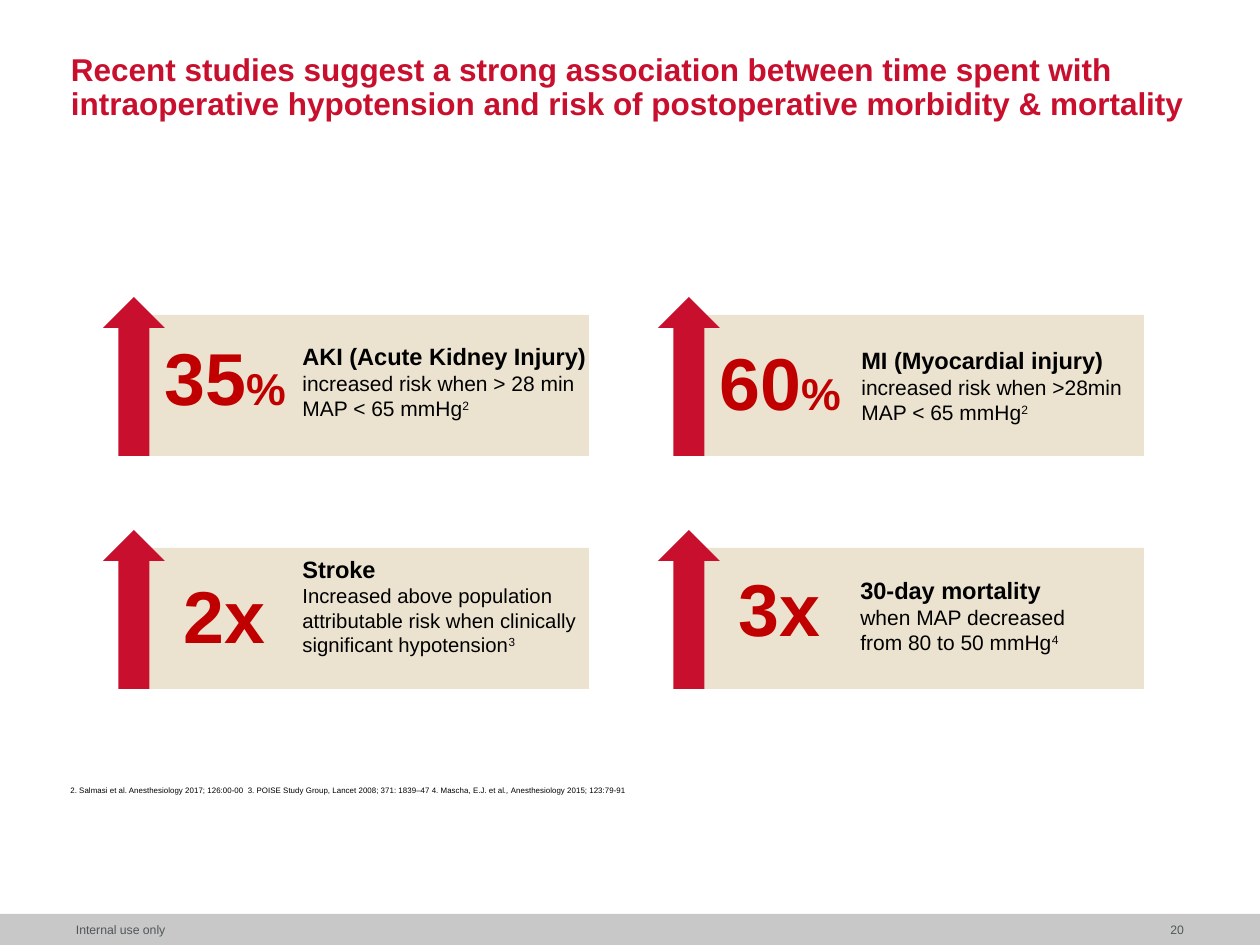
from pptx import Presentation
from pptx.dml.color import RGBColor
from pptx.enum.shapes import MSO_SHAPE
from pptx.enum.text import MSO_ANCHOR, PP_ALIGN
from pptx.util import Pt

PX_PER_INCH = 126
COLORS = {"red": "C8102E", "figure": "C00000", "sand": "EBE3CF",
          "bar": "C8C8C8", "grey": "505759", "black": "000000"}
STYLES = {
    "title": {"size": 18, "bold": True, "color": "red"},
    "figure": {"size": 42, "bold": True, "color": "figure"},
    "percent": {"size": 25.5, "bold": True, "color": "figure"},
    "outcome": {"size": 13.5, "bold": True, "color": "black"},
    "detail": {"size": 12, "bold": False, "color": "black"},
    "dense": {"size": 11.6, "bold": False, "color": "black"},
    "source": {"size": 4.5, "bold": False, "color": "black"},
    "source italic": {"size": 4.5, "italic": True, "color": "black"},
    "footer": {"size": 7, "bold": False, "color": "grey"},
}
FLUSH = {"margin_left": 0, "margin_right": 0, "margin_top": 0,
         "margin_bottom": 0, "vertical_anchor": MSO_ANCHOR.MIDDLE}
PANEL_SIZE = (470, 141)
PANEL_COLUMNS = (119, 674)
PANEL_ROWS = (315, 548)
FIGURE_CENTER = 106

FINDINGS = [
    {"figure": [("35", "figure"), ("%", "percent")], "figure_width": 147, "figure_top": 11,
     "text_box": (171, 21, 310, 96),
     "text": [[("AKI (Acute Kidney Injury) ", "outcome"),
               ("increased risk when > 28 min MAP < 65 mmHg", "detail"),
               ("2", "detail", 30)]]},
    {"figure": [("60", "figure"), ("%", "percent")], "figure_width": 147, "figure_top": 16,
     "text_box": (175, 25, 296, 92),
     "text": [[("MI (Myocardial injury) ", "outcome"),
               ("increased risk when >28min MAP < 65 mmHg", "detail"),
               ("2", "detail", 30)]]},
    {"figure": [("2x", "figure")], "figure_width": 108, "figure_top": 16,
     "text_box": (171, 1, 299, 140),
     "text": [[("Stroke", "outcome")],
              [("Increased above population attributable risk when clinically "
                "significant hypotension", "dense"), ("3", "dense", 30)]]},
    {"figure": [("3x", "figure")], "figure_width": 108, "figure_top": 9,
     "text_box": (174, 22, 277, 92),
     "text": [[("30-day mortality", "outcome")],
              [("when MAP decreased from 80 to 50 mmHg", "detail"),
               ("4", "detail", 30)]]},
]


def emu(*lengths):
    """Turn px lengths into EMU."""
    return [round(length * 914400 / PX_PER_INCH) for length in lengths]


def add_block(slide, preset, box, color):
    """Add a flat preset shape without outline."""
    block = slide.shapes.add_shape(preset, *emu(*box))
    block.shadow.inherit = False
    block.fill.solid()
    block.fill.fore_color.rgb = RGBColor.from_string(COLORS[color])
    block.line.fill.background()


def add_words(slide, box, paragraphs, frame_format=None, paragraph_format=None):
    """Add a text box holding paragraphs of styled runs."""
    frame = slide.shapes.add_textbox(*emu(*box)).text_frame
    for name, value in {"word_wrap": True, **(frame_format or {})}.items():
        setattr(frame, name, value)
    for index, pieces in enumerate(paragraphs):
        paragraph = frame.add_paragraph() if index else frame.paragraphs[0]
        for name, value in (paragraph_format or {}).items():
            setattr(paragraph, name, value)
        for words, style, *raised in pieces:
            run = paragraph.add_run()
            run.text = words
            look = dict(STYLES[style], name="Arial")
            run.font.color.rgb = RGBColor.from_string(COLORS[look.pop("color")])
            look["size"] = Pt(look["size"])
            for name, value in look.items():
                setattr(run.font, name, value)
            for percent in raised:
                run.font._element.set("baseline", str(percent * 1000))


def add_title(slide, box):
    """Add the headline."""
    headline = ("Recent studies suggest a strong association between time spent with "
                "intraoperative hypotension and risk of postoperative morbidity & mortality")
    add_words(slide, box, [[(headline, "title")]], FLUSH, {"line_spacing": 0.9})


def add_finding(slide, box, finding):
    """Add a panel with its rising arrow, figure and explanation."""
    left, top, _, height = box
    add_block(slide, MSO_SHAPE.RECTANGLE, box, "sand")
    add_block(slide, MSO_SHAPE.UP_ARROW, (left - 16, top - 18, 62, height + 18), "red")
    figure_width = finding["figure_width"]
    figure_left = left + FIGURE_CENTER - figure_width // 2
    add_words(slide, (figure_left, top + finding["figure_top"], figure_width, 102),
              [finding["figure"]], {"word_wrap": False})
    text_left, text_top, *text_size = finding["text_box"]
    add_words(slide, (left + text_left, top + text_top, *text_size), finding["text"])


def add_sources(slide, box):
    """Add the line of references."""
    add_words(slide, box, [[
        ("2. Salmasi et al. Anesthesiology 2017; 126:00-00  3. POISE Study Group, "
         "Lancet 2008; 371: 1839–47 4. Mascha, E.J. et al", "source"),
        ("., ", "source italic"),
        ("Anesthesiology 2015; 123:79-91", "source")]])


def add_footer(slide, box):
    """Add the bottom bar with the usage note and page number."""
    left, top, width, height = box
    add_block(slide, MSO_SHAPE.RECTANGLE, box, "bar")
    add_words(slide, (left + 76, top, 126, height), [[("Internal use only", "footer")]], FLUSH)
    add_words(slide, (left + width - 126, top, 50, height), [[("20", "footer")]], FLUSH,
              {"alignment": PP_ALIGN.RIGHT})


def main():
    """Build and save the slide."""
    deck = Presentation()
    deck.slide_width, deck.slide_height = emu(1260, 945)
    slide = deck.slides.add_slide(deck.slide_layouts[6])
    add_footer(slide, (0, 914, 1260, 31))
    add_title(slide, (71, 59, 1118, 94 - 35 + 0))
    for index, finding in enumerate(FINDINGS):
        row, column = divmod(index, 2)
        add_finding(slide, (PANEL_COLUMNS[column], PANEL_ROWS[row], *PANEL_SIZE), finding)
    add_sources(slide, (58, 779, 1176, 23))
    deck.save("out.pptx")


if __name__ == "__main__":
    main()
